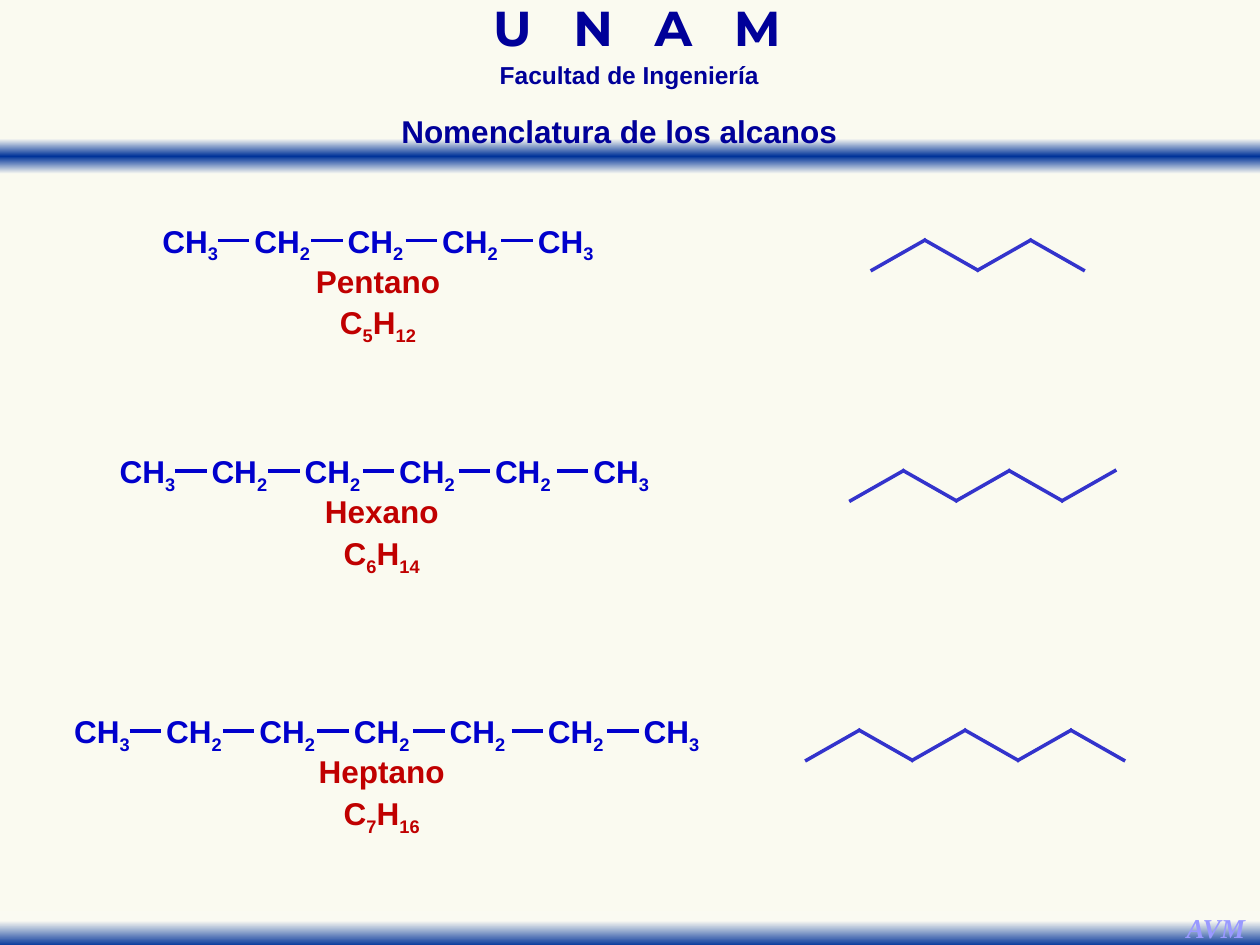
from itertools import groupby

from lxml.etree import SubElement
from pptx import Presentation
from pptx.dml.color import RGBColor
from pptx.enum.shapes import MSO_CONNECTOR, MSO_SHAPE
from pptx.enum.text import MSO_AUTO_SIZE, PP_ALIGN
from pptx.oxml import parse_xml
from pptx.oxml.ns import nsdecls, qn
from pptx.util import Inches, Pt

PAPER, BAND, NAVY = "FAFAF2", "003399", "000099"
BLUE, RED, VIOLET, LILAC = "0000CC", "C00000", "3333CC", "9999FF"
GROUP_OFFSETS = [0, 0.73, 1.47, 2.22, 2.98, 3.76, 4.52]
ALKANES = [
    ("Pentano", 5, 1.18, 1.71, 3.0, 6.91),
    ("Hexano", 6, 0.84, 3.54, 3.03, 6.74),
    ("Heptano", 7, 0.48, 5.6, 3.03, 6.39),
]


def rgb(color):
    """Turn a hex string into a colour."""
    return RGBColor.from_string(color)


def add_band(shapes, y, stops):
    """Add a full-width band with a vertical gradient."""
    sp = shapes.add_shape(MSO_SHAPE.RECTANGLE, 0, Inches(y), Inches(10), Inches(0.28))
    sp.shadow.inherit = False
    sp.line.fill.background()
    marks = "".join(
        f'<a:gs pos="{pos * 1000}"><a:srgbClr val="{color}"/></a:gs>' for pos, color in stops
    )
    fill = parse_xml(
        f'<a:gradFill {nsdecls("a")} rotWithShape="1"><a:gsLst>{marks}</a:gsLst>'
        '<a:lin ang="5400000" scaled="0"/></a:gradFill>'
    )
    sp.element.spPr.find(qn("a:prstGeom")).addnext(fill)


def add_label(shapes, text, x, y, w, h, color, size=18, font="Arial", wrap=False):
    """Add a centred bold text box and return its paragraph."""
    tf = shapes.add_textbox(Inches(x), Inches(y), Inches(w), Inches(h)).text_frame
    tf.word_wrap = wrap
    tf.auto_size = MSO_AUTO_SIZE.SHAPE_TO_FIT_TEXT
    p = tf.paragraphs[0]
    p.alignment = PP_ALIGN.CENTER
    p.font.name = font
    p.font.size = Pt(size)
    p.font.bold = True
    p.font.color.rgb = rgb(color)
    p.add_run().text = text
    return p


def add_formula(shapes, formula, x, y, w, color):
    """Add a chemical formula with its digits as subscripts."""
    parts = [(digit, "".join(chars)) for digit, chars in groupby(formula, str.isdigit)]
    p = add_label(shapes, parts[0][1], x, y, w, 0.4, color)
    for digit, part in parts[1:]:
        r = p.add_run()
        r.text = part
        if digit:
            r._r.get_or_add_rPr().set("baseline", "-25000")


def add_line(shapes, x1, y1, x2, y2, color):
    """Add a straight bond."""
    line = shapes.add_connector(
        MSO_CONNECTOR.STRAIGHT, Inches(x1), Inches(y1), Inches(x2), Inches(y2)
    )
    line.line.color.rgb = rgb(color)
    line.line.width = Pt(2)
    SubElement(line._element.spPr, qn("a:effectLst"))


def add_chain(shapes, carbons, x, y):
    """Add the condensed formula as one group of boxes and bonds."""
    chain = shapes.add_group_shape().shapes
    for i, offset in enumerate(GROUP_OFFSETS[:carbons]):
        left = x + offset
        if i:
            add_line(chain, left - 0.18, y + 0.2, left + 0.07, y + 0.2, BLUE)
        add_formula(chain, "CH3" if i in (0, carbons - 1) else "CH2", left, y, 0.66, BLUE)


def add_zigzag(shapes, carbons, x, top):
    """Add the skeletal formula, one line for each bond."""
    for i in range(carbons - 1):
        left = x + 0.42 * i
        ends = (top + 0.25, top) if i % 2 == 0 else (top, top + 0.25)
        add_line(shapes, left, ends[0], left + 0.44, ends[1], VIOLET)


def add_alkane(shapes, name, carbons, x, y, center, zigzag_x):
    """Add one alkane: chain, name, molecular formula and skeleton."""
    add_label(shapes, name, center - 0.6, y + 0.32, 1.2, 0.4, RED)
    add_formula(shapes, f"C{carbons}H{2 * carbons + 2}", center - 0.42, y + 0.65, 0.84, RED)
    add_chain(shapes, carbons, x, y)
    add_zigzag(shapes, carbons, zigzag_x, y + 0.19)


def add_frame(shapes):
    """Add the bands, headings and initials."""
    add_band(shapes, 1.1, [(0, PAPER), (50, BAND), (100, PAPER)])
    add_band(shapes, 7.23, [(28, PAPER), (100, BAND)])
    p = add_label(shapes, "U N A M", 3.1, 0.06, 3.91, 0.43, NAVY, 28, "Montserrat", True)
    p.line_spacing = 0.7
    p.runs[0]._r.get_or_add_rPr().set("spc", "800")
    p = add_label(shapes, "Facultad de Ingeniería", 3.21, 0.49, 3.57, 0.27, NAVY, 14, wrap=True)
    p.line_spacing = 0.7
    p = add_label(shapes, "AVM", 9.31, 7.18, 0.68, 0.37, LILAC, 15.6, "Times New Roman")
    p.font.italic = True


def main():
    """Build and save the slide."""
    prs = Presentation()
    prs.slide_width, prs.slide_height = Inches(10), Inches(7.5)
    s = prs.slides.add_slide(prs.slide_layouts[6])
    s.background.fill.solid()
    s.background.fill.fore_color.rgb = rgb("FAFAF0")
    add_frame(s.shapes)
    for alkane in ALKANES:
        add_alkane(s.shapes, *alkane)
    add_label(s.shapes, "Nomenclatura de los alcanos", 3.0, 0.84, 3.83, 0.4, NAVY)
    prs.save("out.pptx")


if __name__ == "__main__":
    main()
